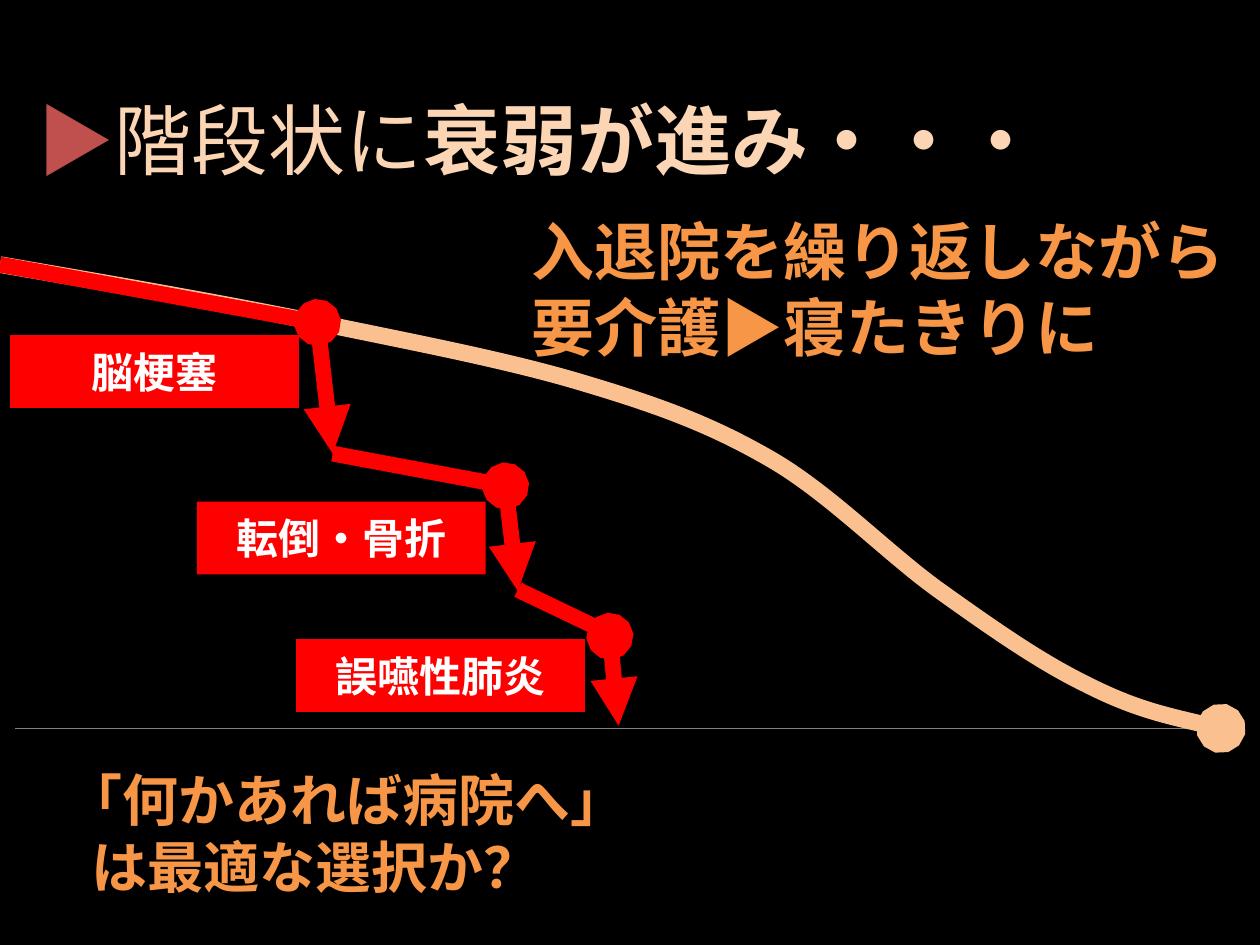
from lxml.etree import SubElement
from pptx import Presentation
from pptx.dml.color import RGBColor
from pptx.enum.shapes import MSO_CONNECTOR, MSO_SHAPE
from pptx.enum.text import MSO_ANCHOR, MSO_AUTO_SIZE, PP_ALIGN
from pptx.oxml.ns import qn
from pptx.util import Pt

FONT = "Noto Sans CJK JP"
COLORS = {"black": "000000", "white": "FFFFFF", "red": "FF0000",
          "marker": "C0504D", "title": "FCD5B5", "orange": "F79646",
          "curve": "FAC090", "gray": "808080"}

# Content: all lengths in points
TITLE = [("▶", "marker", False), ("階段状に", "title", False),
         ("衰弱が進み・・・", "title", True)]
TITLE_BOX = (14.4, 49, 592, 60.5)
# box, size, (paragraph, left indent)
NOTES = [
    ((296.6, 118, 527, 94.5), 36, [("入退院を繰り返しながら\v要介護▶寝たきりに", 0)]),
    ((31, 434, 509, 85), 32, [("「何かあれば病院へ」", 0), ("は最適な選択か？", 14.3)]),
]
EVENTS = [("脳梗塞", 5.8, 191.5), ("転倒・骨折", 112.5, 286.7),
          ("誤嚥性肺炎", 169.2, 365.2)]
EVENT_SIZE = (165, 41.6)
AXIS = ((8.6, 416.2), (711.4, 416.2))
DECLINES = [((0, 151.2), (181.4, 184.3)), ((190.1, 259.2), (289.2, 277.7)),
            ((295.9, 337), (348.5, 362.2))]
DROPS = [((181.4, 184.3), (190.1, 259.2)), ((288.9, 277.7), (295.9, 337.7)),
         ((348.5, 363.6), (353.5, 414.7))]
# start point, then two control points and an end point per Bezier segment
CURVE = [(0, 151.2),
         (62.6, 162), (125.3, 172.8), (181.4, 184.3),
         (236.9, 195.8), (290.2, 205.9), (333.4, 218.9),
         (376.6, 231.8), (406.1, 242.6), (439.9, 262.1),
         (473.8, 281.5), (506.9, 316.1), (537.1, 337.7),
         (567.4, 359.3), (594, 378), (620.6, 391),
         (647.3, 404.6), (672.5, 410.4), (697.7, 416.2)]


def rgb(name):
    return RGBColor.from_string(COLORS[name])


def style_run(r, size, color, bold):
    r.font.size, r.font.bold, r.font.name = Pt(size), bold, FONT
    r.font.color.rgb = rgb(color)
    SubElement(r._r.get_or_add_rPr(), qn("a:ea"), typeface=FONT)


def style_line(sp, color, width, head=None, tail=None):
    sp.line.color.rgb = rgb(color)
    sp.line.width = Pt(width)
    ln = sp.line._get_or_add_ln()
    for tag, kind in (("a:headEnd", head), ("a:tailEnd", tail)):
        if kind:
            SubElement(ln, qn(tag), type=kind)


def add_line(shapes, ends, color, width, head=None, tail=None):
    (x1, y1), (x2, y2) = ends
    c = shapes.add_connector(MSO_CONNECTOR.STRAIGHT, Pt(x1), Pt(y1), Pt(x2), Pt(y2))
    style_line(c, color, width, head, tail)
    SubElement(c._element.spPr, qn("a:effectLst"))


def add_curve(shapes, points):
    pts = [(Pt(x), Pt(y)) for x, y in points]
    builder = shapes.build_freeform(*pts[0])
    builder.add_line_segments(pts[1:], close=False)
    sp = builder.convert_to_shape()
    sp.shadow.inherit = False
    sp.fill.background()
    style_line(sp, "curve", 9.5, tail="oval")
    # Turn every three line segments into one Bezier segment
    path = next(sp._element.iter(qn("a:path")))
    segments = path.findall(qn("a:lnTo"))
    for i in range(0, len(segments), 3):
        bezier = SubElement(path, qn("a:cubicBezTo"))
        for segment in segments[i:i + 3]:
            bezier.append(segment[0])
            path.remove(segment)


def add_note(shapes, box, size, paragraphs):
    tf = shapes.add_textbox(*map(Pt, box)).text_frame
    tf.word_wrap = True
    tf.auto_size = MSO_AUTO_SIZE.SHAPE_TO_FIT_TEXT
    for i, (text, indent) in enumerate(paragraphs):
        p = tf.add_paragraph() if i else tf.paragraphs[0]
        p.text = text
        if indent:
            p._p.get_or_add_pPr().set("marL", str(Pt(indent)))
        for r in p.runs:
            style_run(r, size, "orange", True)


def add_event(shapes, text, left, top):
    sp = shapes.add_shape(MSO_SHAPE.RECTANGLE, Pt(left), Pt(top), *map(Pt, EVENT_SIZE))
    sp.shadow.inherit = False
    sp.fill.solid()
    sp.fill.fore_color.rgb = rgb("red")
    sp.line.fill.background()
    tf = sp.text_frame
    tf.text = text
    tf.vertical_anchor = MSO_ANCHOR.MIDDLE
    p = tf.paragraphs[0]
    p.alignment = PP_ALIGN.CENTER
    style_run(p.runs[0], 24, "white", True)


def fill_title(sp):
    sp.left, sp.top, sp.width, sp.height = map(Pt, TITLE_BOX)
    tf = sp.text_frame
    tf.word_wrap = False
    tf.auto_size = MSO_AUTO_SIZE.SHAPE_TO_FIT_TEXT
    tf.vertical_anchor = MSO_ANCHOR.TOP
    p = tf.paragraphs[0]
    p.alignment = PP_ALIGN.LEFT
    for text, color, bold in TITLE:
        r = p.add_run()
        r.text = text
        style_run(r, 44, color, bold)


def main():
    prs = Presentation()
    prs.slide_width, prs.slide_height = Pt(720), Pt(540)
    slide = prs.slides.add_slide(prs.slide_layouts[5])
    slide.background.fill.solid()
    slide.background.fill.fore_color.rgb = rgb("black")
    shapes = slide.shapes
    fill_title(shapes.title)

    # Baseline and gradual decline
    add_line(shapes, AXIS, "gray", 0.75)
    add_curve(shapes, CURVE)

    # Stepwise decline
    for ends in DECLINES:
        add_line(shapes, ends, "red", 9)
    for ends in DROPS:
        add_line(shapes, ends, "red", 9, "oval", "triangle")

    # Event labels and notes
    for event in EVENTS:
        add_event(shapes, *event)
    for note in NOTES:
        add_note(shapes, *note)
    prs.save("out.pptx")


if __name__ == "__main__":
    main()
